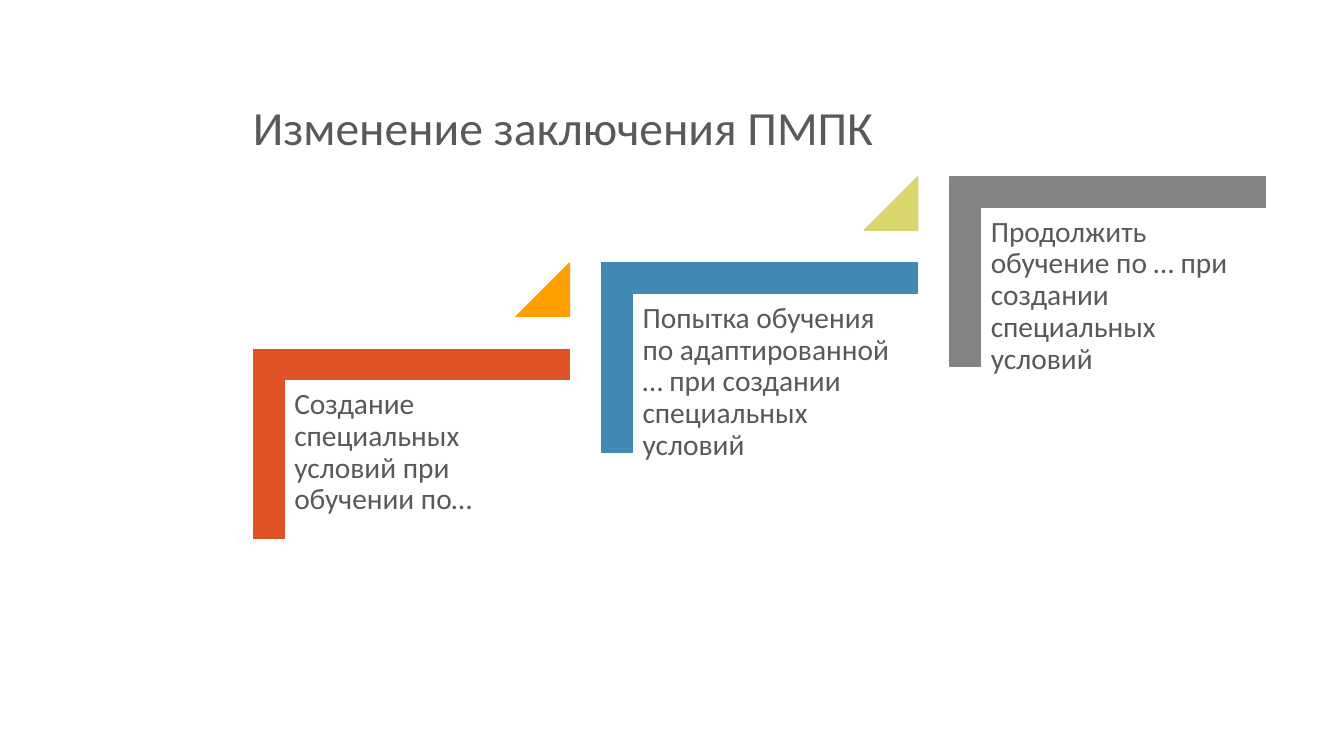
import dataclasses

import pptx
import pptx.dml.color
import pptx.enum.shapes
import pptx.enum.text
import pptx.util

SHAPES = pptx.enum.shapes.MSO_SHAPE
ANCHORS = pptx.enum.text.MSO_ANCHOR

SLIDE_WIDTH = pptx.util.Inches(13.333)
SLIDE_HEIGHT = pptx.util.Inches(7.5)


@dataclasses.dataclass(frozen=True)
class Theme:
    font: str = "Calibri"
    text: str = "595959"
    background: str = "FFFFFF"
    orange_red: str = "DF5327"
    amber: str = "FE9E00"
    blue: str = "418AB3"
    lime: str = "D9D66D"
    grey: str = "838383"
    title_size: float = 34
    body_size: float = 21
    line_width: float = 1
    line_spacing: float = 0.9
    space_after: float = 7


@dataclasses.dataclass(frozen=True)
class Area:
    """Percentages of the slide's width and height."""

    left: float
    top: float
    width: float
    height: float

    def climb(self, index: int) -> "Area":
        return dataclasses.replace(
            self,
            left=self.left + index * STEP_ACROSS,
            top=self.top - index * STEP_UP,
        )

    def lengths(self) -> tuple[int, int, int, int]:
        return (
            round(SLIDE_WIDTH * self.left / 100),
            round(SLIDE_HEIGHT * self.top / 100),
            round(SLIDE_WIDTH * self.width / 100),
            round(SLIDE_HEIGHT * self.height / 100),
        )


@dataclasses.dataclass(frozen=True)
class Step:
    text: str
    corner_color: str
    triangle_color: str | None = None


THEME = Theme()
STEP_ACROSS = 25.91
STEP_UP = 11.4
TITLE_AREA = Area(18.08, 4.4, 76.88, 17.47)
CORNER_AREA = Area(23.55, 37.87, 14.1, 41.73)
TEXT_AREA = Area(21.22, 50.27, 21.15, 32.93)
TRIANGLE_AREA = Area(38.4, 34.8, 3.98, 7.07)
CORNER_THICKNESS = 0.161

STEPS = [
    Step(
        "Создание специальных условий при обучении по…",
        THEME.orange_red,
        THEME.amber,
    ),
    Step(
        "Попытка обучения по адаптированной … при создании специальных условий",
        THEME.blue,
        THEME.lime,
    ),
    Step(
        "Продолжить обучение по … при создании специальных условий",
        THEME.grey,
    ),
]


def rgb(color: str) -> pptx.dml.color.RGBColor:
    return pptx.dml.color.RGBColor.from_string(color)


def add_figure(page, kind, area: Area, color: str, adjustments: list[float], rotation: float = 0) -> None:
    figure = page.shapes.add_shape(kind, *area.lengths())
    figure.rotation = rotation
    figure.shadow.inherit = False
    figure.fill.solid()
    figure.fill.fore_color.rgb = rgb(color)
    figure.line.color.rgb = rgb(color)
    figure.line.width = pptx.util.Pt(THEME.line_width)
    for index, value in enumerate(adjustments):
        figure.adjustments[index] = value


def add_text(page, text: str, area: Area, size: float, anchor, inset: float, space_after: float = 0) -> None:
    box = page.shapes.add_textbox(*area.lengths())
    frame = box.text_frame
    frame.word_wrap = True
    frame.vertical_anchor = anchor
    frame.margin_left = frame.margin_right = pptx.util.Inches(inset)
    frame.margin_top = frame.margin_bottom = pptx.util.Inches(min(inset, 0.09))
    para = frame.paragraphs[0]
    para.line_spacing = THEME.line_spacing
    para.space_after = pptx.util.Pt(space_after)
    span = para.add_run()
    span.text = text
    span.font.name = THEME.font
    span.font.size = pptx.util.Pt(size)
    span.font.color.rgb = rgb(THEME.text)


def add_step(page, step: Step, index: int) -> None:
    add_figure(
        page,
        SHAPES.CORNER,
        CORNER_AREA.climb(index),
        step.corner_color,
        [CORNER_THICKNESS, CORNER_THICKNESS],
        rotation=90,
    )
    add_text(
        page,
        step.text,
        TEXT_AREA.climb(index),
        THEME.body_size,
        ANCHORS.TOP,
        inset=0.09,
        space_after=THEME.space_after,
    )
    if step.triangle_color:
        add_figure(
            page,
            SHAPES.ISOSCELES_TRIANGLE,
            TRIANGLE_AREA.climb(index),
            step.triangle_color,
            [1],
        )


def main() -> None:
    deck = pptx.Presentation()
    deck.slide_width = SLIDE_WIDTH
    deck.slide_height = SLIDE_HEIGHT
    page = deck.slides.add_slide(deck.slide_layouts[6])
    page.background.fill.solid()
    page.background.fill.fore_color.rgb = rgb(THEME.background)
    add_text(
        page,
        "Изменение заключения ПМПК",
        TITLE_AREA,
        THEME.title_size,
        ANCHORS.BOTTOM,
        inset=0.1,
    )
    for index, step in enumerate(STEPS):
        add_step(page, step, index)
    deck.save("out.pptx")


if __name__ == "__main__":
    main()
